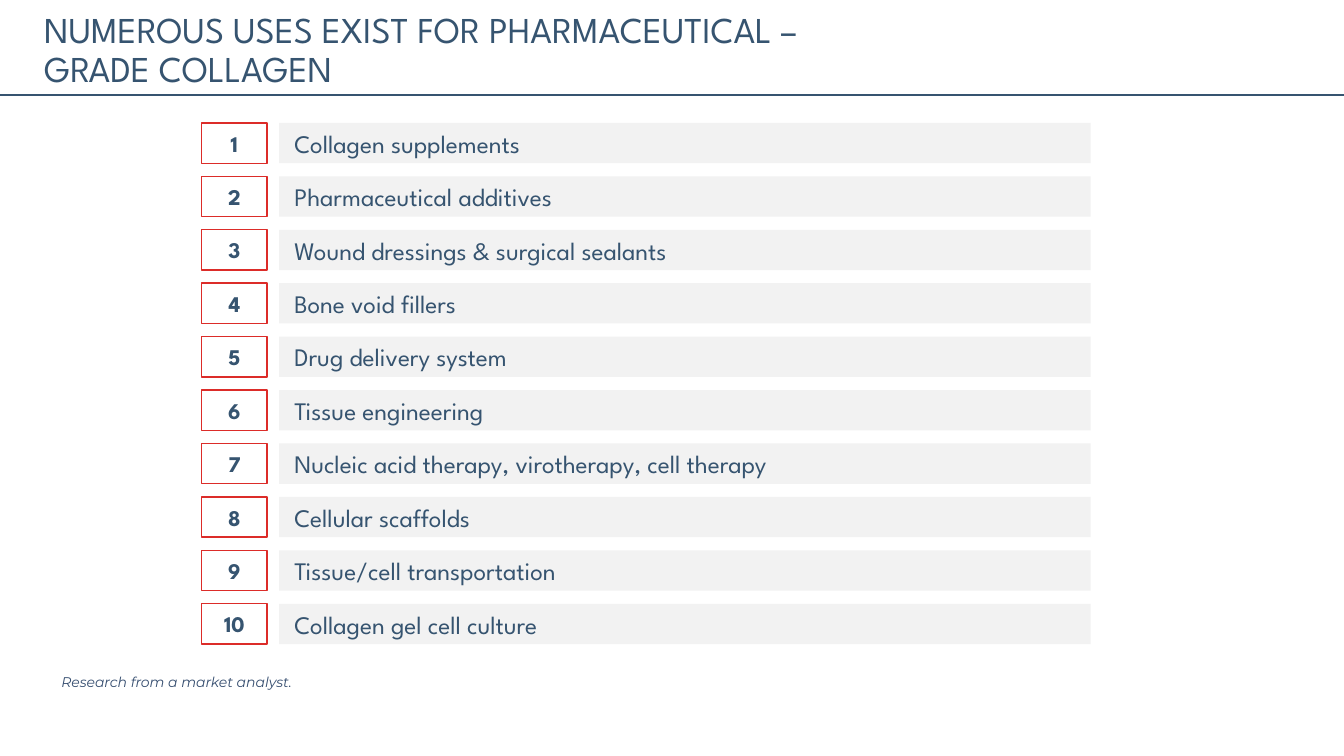
"""Build a slide listing ten uses of pharmaceutical-grade collagen."""
import pptx
import pptx.dml.color
import pptx.enum.shapes
import pptx.enum.text
import pptx.oxml.ns
import pptx.util
import lxml.etree

Pt = pptx.util.Pt
NAVY = pptx.dml.color.RGBColor(0x36, 0x54, 0x70)
SLATE = pptx.dml.color.RGBColor(0x35, 0x4D, 0x6F)
RED = pptx.dml.color.RGBColor(0xDC, 0x2C, 0x29)
LIGHT_GRAY = pptx.dml.color.RGBColor(0xF2, 0xF2, 0xF2)
HEADING_FONT = "League Spartan"
RECTANGLE = pptx.enum.shapes.MSO_SHAPE.RECTANGLE
ALIGN = pptx.enum.text.PP_ALIGN
ANCHOR = pptx.enum.text.MSO_ANCHOR

USES = [
    "Collagen supplements",
    "Pharmaceutical additives",
    "Wound dressings & surgical sealants",
    "Bone void fillers",
    "Drug delivery system",
    "Tissue engineering",
    "Nucleic acid therapy, virotherapy, cell therapy",
    "Cellular scaffolds",
    "Tissue/cell transportation",
    "Collagen gel cell culture",
]
FIRST_TOP = 87.84
ROW_PITCH = 38.16
ROW_HEIGHT = 28.8


def write_text(shape, text, size, color=NAVY, font_name=HEADING_FONT,
               anchor=ANCHOR.MIDDLE, alignment=ALIGN.LEFT):
    frame = shape.text_frame
    frame.text = text
    frame.word_wrap = True
    frame.vertical_anchor = anchor
    paragraph = frame.paragraphs[0]
    paragraph.alignment = alignment
    font = paragraph.runs[0].font
    font.name = font_name
    font.size = Pt(size)
    font.color.rgb = color
    return paragraph


def add_rectangle(left, top, width):
    shape = slide.shapes.add_shape(
        RECTANGLE, Pt(left), Pt(top), Pt(width), Pt(ROW_HEIGHT))
    shape.shadow.inherit = False
    return shape


presentation = pptx.Presentation()
presentation.slide_width = Pt(960)
presentation.slide_height = Pt(540)
slide = presentation.slides.add_slide(presentation.slide_layouts[6])

rule = slide.shapes.add_connector(
    pptx.enum.shapes.MSO_CONNECTOR.STRAIGHT, Pt(0), Pt(67.8), Pt(960), Pt(67.8))
rule.line.color.rgb = NAVY
rule.line.width = Pt(1.25)
lxml.etree.SubElement(rule._element.spPr, pptx.oxml.ns.qn("a:effectLst"))

title = slide.shapes.add_textbox(Pt(24.48), Pt(2.16), Pt(634.32), Pt(65.52))
paragraph = write_text(
    title, "NUMEROUS USES EXIST FOR PHARMACEUTICAL – GRADE COLLAGEN", 26,
    anchor=ANCHOR.BOTTOM)
paragraph.line_spacing = Pt(28.2)

source_note = slide.shapes.add_textbox(Pt(36.72), Pt(477.36), Pt(388.8), Pt(19.44))
paragraph = write_text(
    source_note, "Research from a market analyst.", 10, SLATE, "Montserrat", ANCHOR.TOP)
paragraph.runs[0].font.italic = True

for index, use in enumerate(USES):
    top = FIRST_TOP + index * ROW_PITCH

    bar = add_rectangle(199.44, top, 579.6)
    bar.fill.solid()
    bar.fill.fore_color.rgb = LIGHT_GRAY
    bar.line.fill.background()
    bar.text_frame.margin_left = Pt(10.8)
    write_text(bar, use, 18)

    number_box = add_rectangle(144, top, 46.8)
    number_box.fill.background()
    number_box.line.color.rgb = RED
    number_box.line.width = Pt(1)
    paragraph = write_text(number_box, str(index + 1), 16, alignment=ALIGN.CENTER)
    paragraph.runs[0].font.bold = True

presentation.save("out.pptx")
